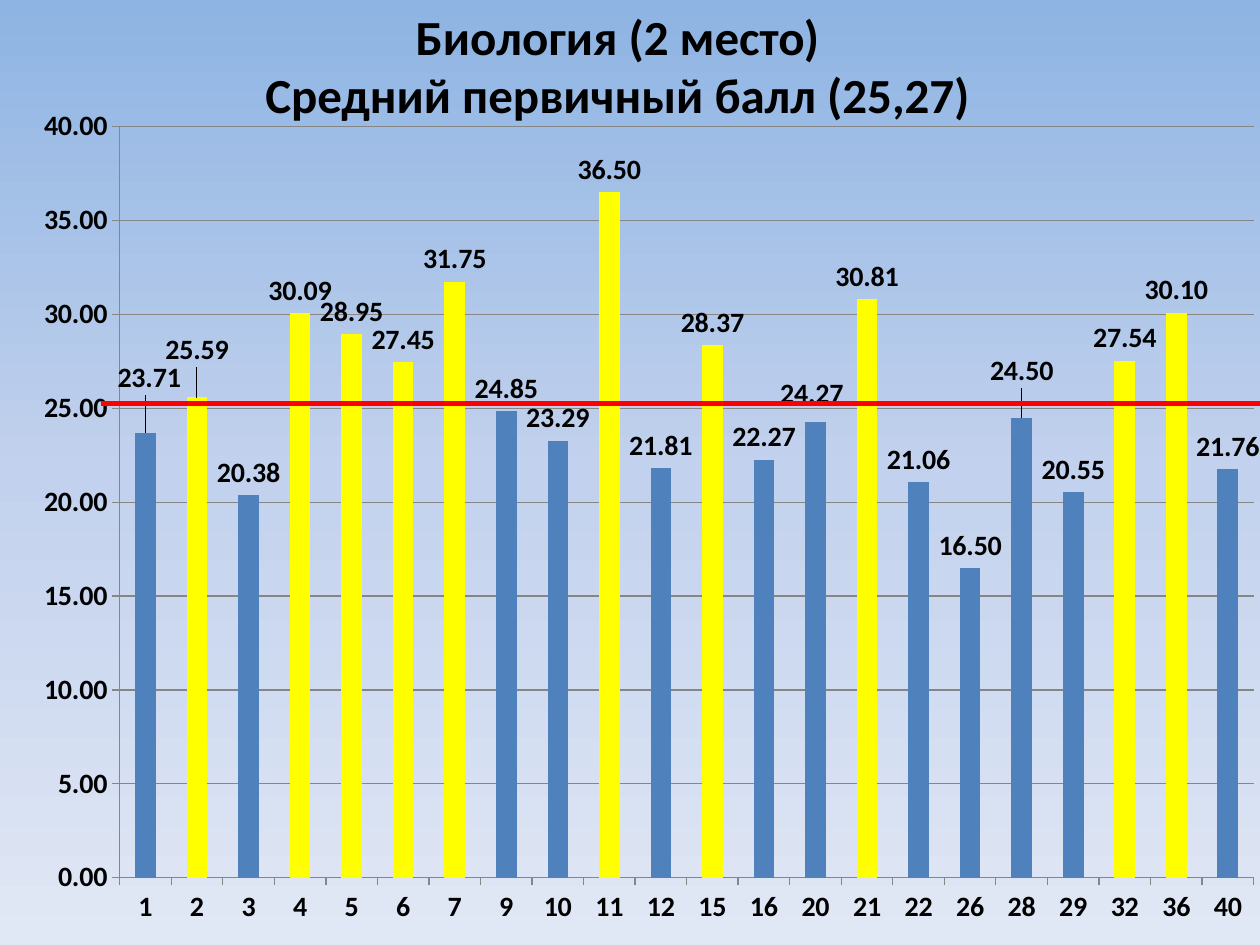
from dataclasses import dataclass

from lxml.etree import SubElement
from pptx import Presentation
from pptx.chart.data import CategoryChartData
from pptx.dml.color import RGBColor
from pptx.enum.chart import XL_CHART_TYPE as ChartType, XL_LABEL_POSITION as LabelPos
from pptx.enum.chart import XL_TICK_MARK as Tick
from pptx.enum.shapes import MSO_CONNECTOR as Connector
from pptx.enum.text import MSO_AUTO_SIZE as AutoSize, PP_ALIGN as Align
from pptx.oxml import parse_xml
from pptx.oxml.ns import nsdecls, qn
from pptx.util import Inches, Pt


@dataclass(frozen=True)
class Theme:
    font: str = "Calibri"
    title_size: int = 28
    chart_size: int = 16
    text: str = "000000"
    below: str = "4F81BD"
    above: str = "FFFF00"
    average: str = "FF0000"
    grid: str = "868686"
    background: tuple = ((0, "8EB4E3"), (50, "C2D1ED"), (100, "E1E8F5"))


@dataclass(frozen=True)
class School:
    number: int
    score: float
    label_shift: tuple[float, float] | None = None


THEME = Theme()
AVERAGE = 25.27
TITLE = "Биология (2 место)\nСредний первичный балл (25,27)"
SCHOOLS = [
    School(1, 23.71, (0.003, -0.038)), School(2, 25.59, (0, -0.03)),
    School(3, 20.38), School(4, 30.09), School(5, 28.95), School(6, 27.45),
    School(7, 31.75), School(9, 24.85), School(10, 23.29), School(11, 36.5),
    School(12, 21.81), School(15, 28.37), School(16, 22.27),
    School(20, 24.27, (-0.003, -0.007)), School(21, 30.81), School(22, 21.06),
    School(26, 16.5), School(28, 24.5, (0, -0.029)), School(29, 20.55),
    School(32, 27.54), School(36, 30.1), School(40, 21.76),
]


def style_font(font, size: int) -> None:
    font.name = THEME.font
    font.size = Pt(size)
    font.bold = True
    font.color.rgb = RGBColor.from_string(THEME.text)


def paint_background(s) -> None:
    fill = s.background.fill
    fill.gradient()
    fill.gradient_angle = 270
    stops = s._element.find(".//" + qn("a:gsLst"))
    for stop in list(stops):
        stops.remove(stop)
    for percent, color in THEME.background:
        stop = SubElement(stops, qn("a:gs"), pos=str(percent * 1000))
        SubElement(stop, qn("a:srgbClr"), val=color)


def add_title(s) -> None:
    tb = s.shapes.add_textbox(Inches(1.97), 0, Inches(5.86), Inches(1.04))
    tf = tb.text_frame
    tf.text = TITLE
    tf.word_wrap = False
    tf.auto_size = AutoSize.SHAPE_TO_FIT_TEXT
    for p in tf.paragraphs:
        p.alignment = Align.CENTER
        for r in p.runs:
            style_font(r.font, THEME.title_size)


def manual_layout(**settings: str | float):
    items = "".join(f'<c:{name} val="{value}"/>' for name, value in settings.items())
    return parse_xml(f'<c:layout {nsdecls("c")}><c:manualLayout>{items}'
                     "</c:manualLayout></c:layout>")


def style_axis(axis) -> None:
    axis.major_tick_mark = Tick.OUTSIDE
    axis.minor_tick_mark = Tick.NONE
    axis.format.line.color.rgb = RGBColor.from_string(THEME.grid)
    style_font(axis.tick_labels.font, THEME.chart_size)


def add_score_chart(s) -> None:
    data = CategoryChartData(number_format="0.00")
    data.categories = [str(school.number) for school in SCHOOLS]
    data.add_series("Средний балл", [school.score for school in SCHOOLS])
    chart = s.shapes.add_chart(ChartType.COLUMN_CLUSTERED, 0, Inches(0.84),
                               Inches(10), Inches(6.66), data).chart
    chart.has_legend = False
    chart.has_title = False
    style_font(chart.font, THEME.chart_size)

    style_axis(chart.category_axis)
    axis = chart.value_axis
    style_axis(axis)
    axis.minimum_scale, axis.maximum_scale, axis.major_unit = 0, 40, 5
    axis.tick_labels.number_format = "0.00"
    axis.tick_labels.number_format_is_linked = False
    axis.has_major_gridlines = True
    axis.major_gridlines.format.line.color.rgb = RGBColor.from_string(THEME.grid)

    plot_area = chart._chartSpace.chart.plotArea
    for old in plot_area.findall(qn("c:layout")):
        plot_area.remove(old)
    plot_area.insert(0, manual_layout(layoutTarget="inner", xMode="edge", yMode="edge",
                                      x=0.095, y=0.025, w=0.9, h=0.895))

    plot = chart.plots[0]
    plot.gap_width = 150
    plot.vary_by_categories = False
    series = plot.series[0]
    series.format.fill.solid()
    series.format.fill.fore_color.rgb = RGBColor.from_string(THEME.below)
    labels = series.data_labels
    labels.show_value = True
    labels.number_format = "0.00"
    labels.number_format_is_linked = False
    labels.position = LabelPos.OUTSIDE_END
    style_font(labels.font, THEME.chart_size)

    for i, school in enumerate(SCHOOLS):
        point = series.points[i]
        if school.score > AVERAGE:
            point.format.fill.solid()
            point.format.fill.fore_color.rgb = RGBColor.from_string(THEME.above)
        if school.label_shift:
            label = point.data_label
            style_font(label.font, THEME.chart_size)
            label.position = LabelPos.OUTSIDE_END
            x, y = school.label_shift
            idx = series._element.find(f'.//{qn("c:dLbl")}/{qn("c:idx")}[@val="{i}"]')
            idx.addnext(manual_layout(x=x, y=y))


def add_average_line(s) -> None:
    line = s.shapes.add_connector(Connector.STRAIGHT, Inches(0.8), Inches(3.2),
                                  Inches(10), Inches(3.2))
    line.line.color.rgb = RGBColor.from_string(THEME.average)
    line.line.width = Pt(3)
    SubElement(line._element.spPr, qn("a:effectLst"))


def main() -> None:
    prs = Presentation()
    prs.slide_width, prs.slide_height = Inches(10), Inches(7.5)
    s = prs.slides.add_slide(prs.slide_layouts[6])
    paint_background(s)
    add_title(s)
    add_score_chart(s)
    add_average_line(s)
    prs.save("out.pptx")


if __name__ == "__main__":
    main()
